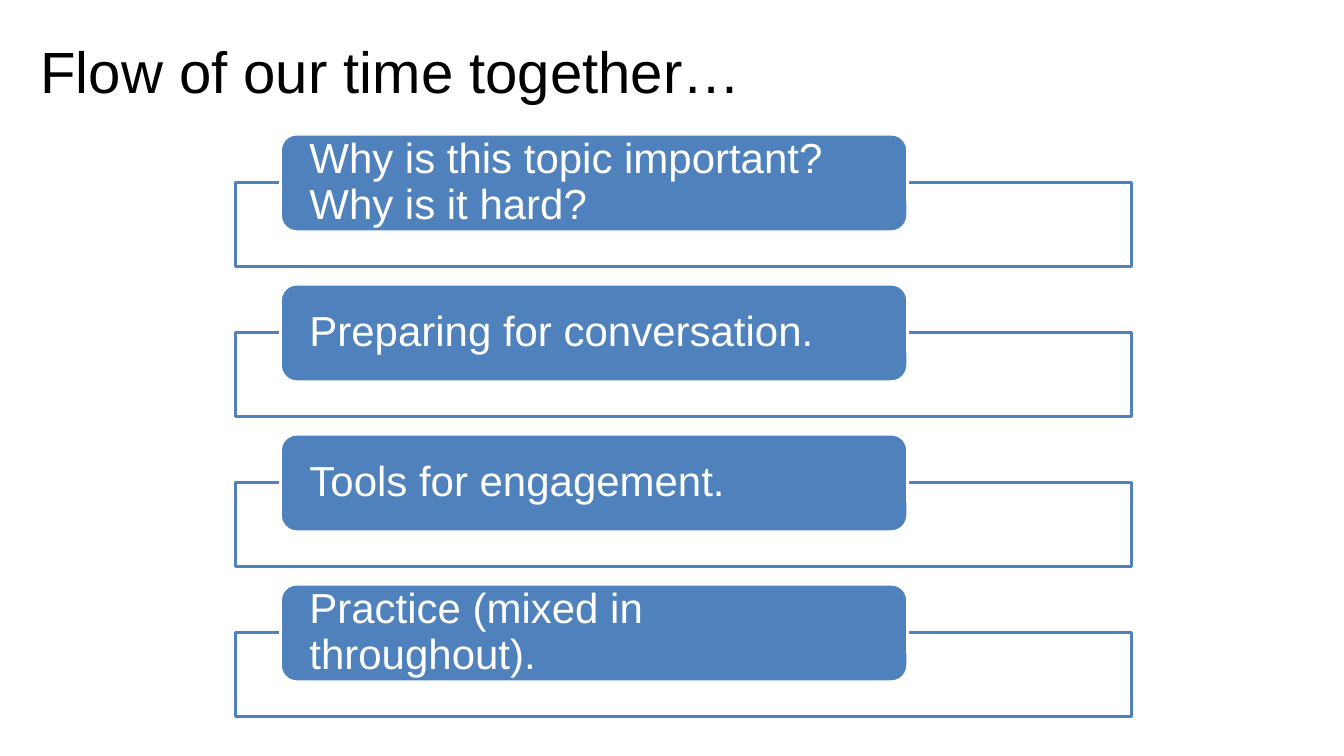
from lxml import etree
from pptx import Presentation
from pptx.dml.color import RGBColor
from pptx.enum.shapes import MSO_SHAPE
from pptx.enum.text import MSO_ANCHOR, MSO_AUTO_SIZE, PP_ALIGN
from pptx.oxml.ns import qn
from pptx.util import Cm, Pt

BLACK = RGBColor(0x00, 0x00, 0x00)
WHITE = RGBColor(0xFF, 0xFF, 0xFF)
BLUE = RGBColor(0x4F, 0x81, 0xBD)
RECTANGLE = MSO_SHAPE.RECTANGLE
ROUNDED = MSO_SHAPE.ROUNDED_RECTANGLE
MIDDLE = MSO_ANCHOR.MIDDLE
NO_AUTOFIT = MSO_AUTO_SIZE.NONE
LEFT = PP_ALIGN.LEFT

FONT = "Arial"
TITLE_ONLY = 5
SLIDE_WIDTH, SLIDE_HEIGHT = 33.87, 19.05
STEP_PITCH = 3.78
STEPS = [
    "Why is this topic important? Why is it hard?",
    "Preparing for conversation.",
    "Tools for engagement.",
    "Practice (mixed in throughout).",
]


def write_text(shape, text, *, size, color, insets, line_spacing=1.0):
    frame = shape.text_frame
    frame.word_wrap = True
    frame.auto_size = NO_AUTOFIT
    frame.vertical_anchor = MIDDLE
    left, top, right, bottom = insets
    frame.margin_left, frame.margin_top = Cm(left), Cm(top)
    frame.margin_right, frame.margin_bottom = Cm(right), Cm(bottom)
    paragraph = frame.paragraphs[0]
    paragraph.alignment = LEFT
    paragraph.line_spacing = line_spacing
    run = paragraph.add_run()
    run.text = text
    run.font.name = FONT
    run.font.size = Pt(size)
    run.font.color.rgb = color


def add_panel(slide, preset, left, top, width, height, fill, line):
    panel = slide.shapes.add_shape(preset, Cm(left), Cm(top), Cm(width), Cm(height))
    panel.shadow.inherit = False
    panel.fill.solid()
    panel.fill.fore_color.rgb = fill
    panel.line.color.rgb = line
    panel.line.width = Pt(2)
    return panel


def set_opacity(panel, percent):
    color = panel.fill._xPr.find(qn("a:solidFill")).find(qn("a:srgbClr"))
    etree.SubElement(color, qn("a:alpha")).set("val", str(percent * 1000))


def place_title(slide, left, top, width, height):
    title = slide.shapes.title
    title.left, title.top = Cm(left), Cm(top)
    title.width, title.height = Cm(width), Cm(height)
    write_text(title, "Flow of our time together…", size=41.5, color=BLACK,
               insets=(1.02, 0.25, 0.76, 0.25))


def add_step(slide, text, left, top, width):
    outline = add_panel(slide, RECTANGLE, left, top + 1.22, width, 2.12, WHITE, BLUE)
    set_opacity(outline, 90)
    label = add_panel(slide, ROUNDED, left + width * 0.05, top, width * 0.7, 2.46,
                      BLUE, WHITE)
    write_text(label, text, size=30, color=WHITE, insets=(0.61, 0, 0.61, 0),
               line_spacing=0.9)


def add_flow(slide, left, top, width):
    for index, text in enumerate(STEPS):
        add_step(slide, text, left, top + index * STEP_PITCH, width)


def main():
    presentation = Presentation()
    presentation.slide_width = Cm(SLIDE_WIDTH)
    presentation.slide_height = Cm(SLIDE_HEIGHT)
    slide = presentation.slides.add_slide(presentation.slide_layouts[TITLE_ONLY])
    place_title(slide, 0, 0, SLIDE_WIDTH, 3.56)
    add_flow(slide, 5.94, 3.38, 22.58)
    presentation.save("out.pptx")


if __name__ == "__main__":
    main()
